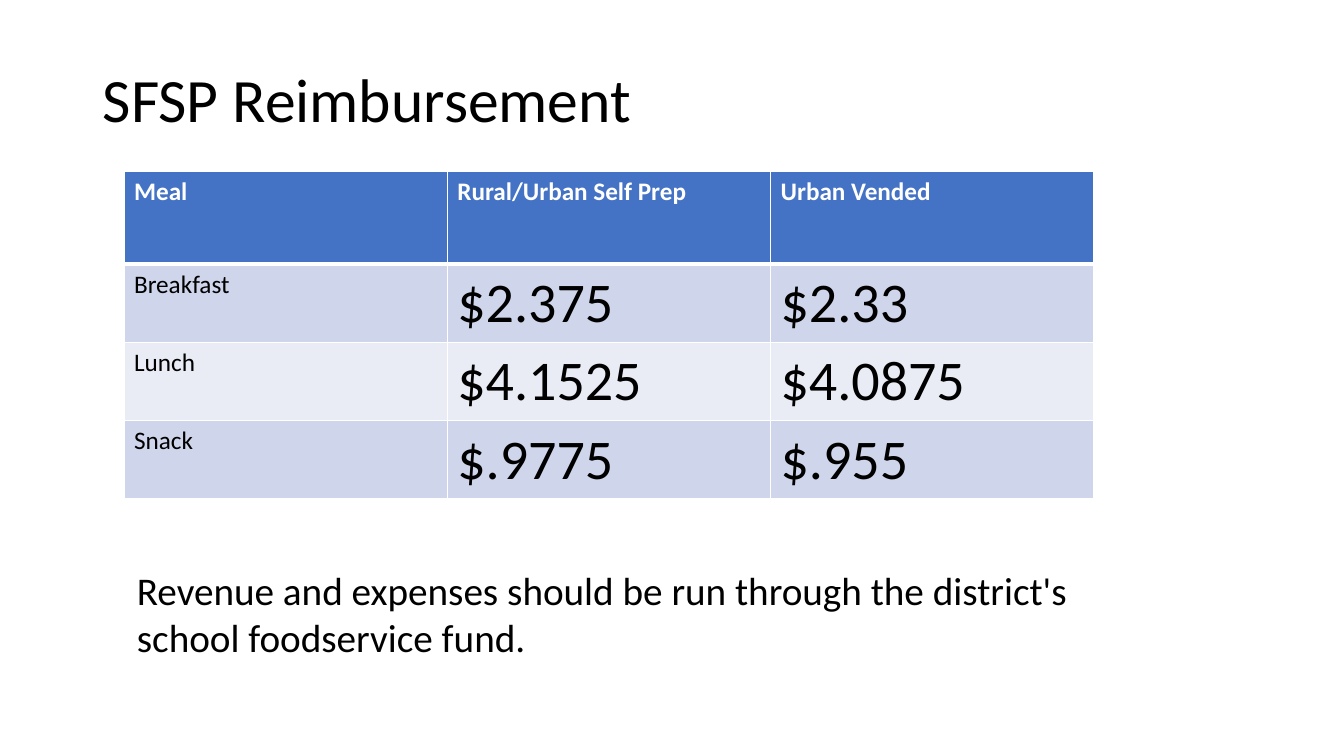
from dataclasses import dataclass

from lxml import etree
from pptx import Presentation
from pptx.dml.color import RGBColor
from pptx.enum.text import MSO_ANCHOR, PP_ALIGN
from pptx.oxml.ns import qn
from pptx.util import Inches, Pt

LEFT = PP_ALIGN.LEFT
TOP = MSO_ANCHOR.TOP


@dataclass
class Theme:
    font: str = "Calibri"
    black: str = "000000"
    white: str = "FFFFFF"
    header: str = "4472C4"
    odd_row: str = "CFD5EA"
    even_row: str = "E9EBF5"
    title_size: int = 44
    note_size: int = 28
    label_size: int = 18
    rate_size: int = 40
    thin_line: int = 1
    thick_line: int = 3


theme = Theme()


def format_paragraph(paragraph, size, color, bold=False):
    paragraph.alignment = LEFT
    paragraph.font.name = theme.font
    paragraph.font.size = Pt(size)
    paragraph.font.bold = bold
    paragraph.font.color.rgb = RGBColor.from_string(color)


def add_border(cell, side, width):
    line = etree.SubElement(cell._tc.get_or_add_tcPr(), qn(f"a:ln{side}"), w=str(Pt(width)))
    fill = etree.SubElement(line, qn("a:solidFill"))
    etree.SubElement(fill, qn("a:srgbClr"), val=theme.white)


presentation = Presentation()
presentation.slide_width = Inches(13.33)
presentation.slide_height = Inches(7.5)
slide = presentation.slides.add_slide(presentation.slide_layouts[5])

# Title
title = slide.shapes.title
title.left, title.top = Inches(0.92), Inches(0.4)
title.width, title.height = Inches(11.5), Inches(1.92)
title.text_frame.text = "SFSP Reimbursement"
title.text_frame.vertical_anchor = TOP
title.text_frame.margin_top = Inches(0.29)
title_paragraph = title.text_frame.paragraphs[0]
format_paragraph(title_paragraph, theme.title_size, theme.black)
title_paragraph.line_spacing = 0.9

# Reimbursement rates
rates = [
    ["Meal", "Rural/Urban Self Prep", "Urban Vended"],
    ["Breakfast", "$2.375", "$2.33"],
    ["Lunch", "$4.1525", "$4.0875"],
    ["Snack", "$.9775", "$.955"],
]
header_height, row_height = Inches(0.92), Inches(0.775)
table = slide.shapes.add_table(
    len(rates), len(rates[0]), Inches(1.23), Inches(1.7),
    Inches(9.62), header_height + 3 * row_height,
).table

for row_index, values in enumerate(rates):
    is_header = row_index == 0
    table.rows[row_index].height = header_height if is_header else row_height
    row_fill = theme.odd_row if row_index % 2 else theme.even_row
    for column_index, value in enumerate(values):
        cell = table.cell(row_index, column_index)
        cell.text = value
        is_label = is_header or column_index == 0
        format_paragraph(
            cell.text_frame.paragraphs[0],
            theme.label_size if is_label else theme.rate_size,
            theme.white if is_header else theme.black,
            bold=is_header,
        )
        # The rule under the header is heavier than the others
        add_border(cell, "L", theme.thin_line)
        add_border(cell, "R", theme.thin_line)
        add_border(cell, "T", theme.thick_line if row_index == 1 else theme.thin_line)
        add_border(cell, "B", theme.thick_line if is_header else theme.thin_line)
        cell.fill.solid()
        cell.fill.fore_color.rgb = RGBColor.from_string(theme.header if is_header else row_fill)

# Note on the fund
note = slide.shapes.add_textbox(Inches(1.26), Inches(5.57), Inches(9.76), Inches(1.04))
note.text_frame.word_wrap = True
note.text_frame.text = (
    "Revenue and expenses should be run through the district's school foodservice fund."
)
format_paragraph(note.text_frame.paragraphs[0], theme.note_size, theme.black)

presentation.save("out.pptx")
